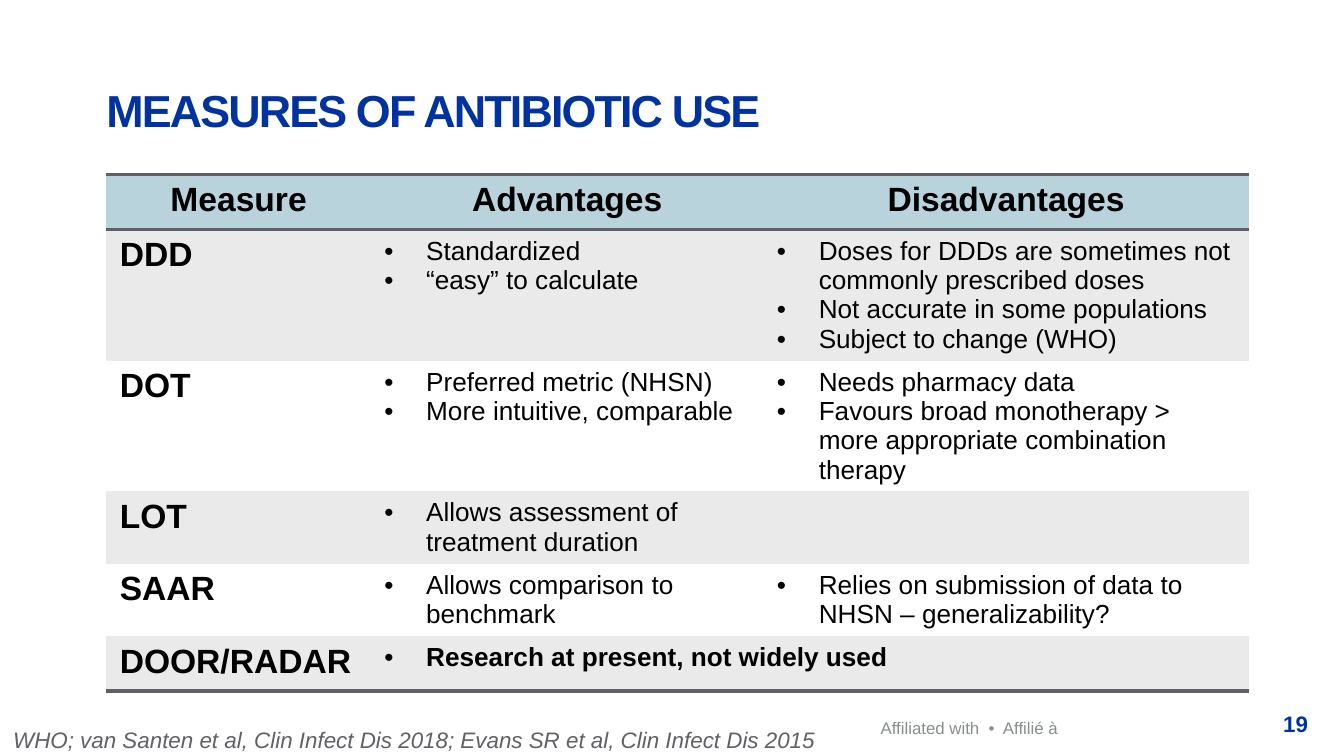
from dataclasses import dataclass

from lxml import etree
from pptx import Presentation
from pptx import util as u
from pptx.dml import color
from pptx.enum import text
from pptx.oxml import ns

FONT = "Arial"
BLUE, GREY, PALE_GREY = "0033A0", "606164", "898D8D"
BLACK, WHITE, HEADER_FILL, BAND_FILL = "000000", "FFFFFF", "B9D3DC", "EAEAEA"
LEFT, CENTER, RIGHT = text.PP_ALIGN.LEFT, text.PP_ALIGN.CENTER, text.PP_ALIGN.RIGHT
TOP, MIDDLE, BOTTOM = text.MSO_ANCHOR.TOP, text.MSO_ANCHOR.MIDDLE, text.MSO_ANCHOR.BOTTOM
NO_STYLE = "{2D5ABB26-0587-4C30-8999-92F81FD0307C}"
HEADING = {"size": u.Pt(18), "bold": True}
BODY = {"size": u.Pt(14), "bold": False}
COLUMN_WIDTHS = (5.0, 7.42, 9.17)
ROW_HEIGHT = 1.04


@dataclass(frozen=True)
class Label:
    """A one-line text box; lengths in centimetres."""
    words: str
    place: tuple[float, float, float, float]
    hue: str
    style: dict
    align: text.PP_ALIGN = LEFT
    anchor: text.MSO_ANCHOR = TOP
    insets: tuple[float, float, float, float] = (0.25, 0.13, 0.25, 0.13)
    leading: float = 1.0
    tracking: int = 0


@dataclass(frozen=True)
class Measure:
    """A table row."""
    name: str
    advantages: tuple[str, ...]
    disadvantages: tuple[str, ...] = ()
    merged: bool = False


LABELS = (
    Label("Affiliated with  •  Affilié à", (14.27, 13.56, 5.72, 0.43), PALE_GREY,
          {"size": u.Pt(9)}, RIGHT, insets=(0, 0, 0, 0)),
    Label("MEASURES OF ANTIBIOTIC USE", (2.01, 1.17, 21.59, 1.5), BLUE,
          {"size": u.Pt(24), "bold": True}, anchor=BOTTOM,
          insets=(0, 0, 0, 0.1), leading=0.8, tracking=-100),
    Label("WHO; van Santen et al, Clin Infect Dis 2018; Evans SR et al, Clin Infect Dis 2015",
          (0, 13.59, 16.79, 0.76), GREY, {"size": u.Pt(12), "italic": True}),
    Label("19", (23.01, 13.16, 1.96, 1.02), BLUE,
          {"size": u.Pt(12), "bold": True}, RIGHT, MIDDLE),
)

HEADERS = ("Measure", "Advantages", "Disadvantages")
MEASURES = (
    Measure("DDD", ("Standardized", "“easy” to calculate"),
            ("Doses for DDDs are sometimes not commonly prescribed doses",
             "Not accurate in some populations", "Subject to change (WHO)")),
    Measure("DOT", ("Preferred metric (NHSN)", "More intuitive, comparable"),
            ("Needs pharmacy data",
             "Favours broad monotherapy > more appropriate combination therapy")),
    Measure("LOT", ("Allows assessment of treatment duration",)),
    Measure("SAAR", ("Allows comparison to benchmark",),
            ("Relies on submission of data to NHSN – generalizability?",)),
    Measure("DOOR/RADAR", ("Research at present, not widely used",), merged=True),
)


def rgb(value: str) -> color.RGBColor:
    return color.RGBColor.from_string(value)


def write(para, words: str, hue: str, style: dict):
    span = para.add_run()
    span.text = words
    for name, value in {"name": FONT, **style}.items():
        setattr(span.font, name, value)
    span.font.color.rgb = rgb(hue)
    return span


def add_label(page, label: Label) -> None:
    box = page.shapes.add_textbox(*map(u.Cm, label.place))
    frame = box.text_frame
    sides = ("margin_left", "margin_top", "margin_right", "margin_bottom")
    settings = dict(zip(sides, map(u.Cm, label.insets)))
    settings.update(word_wrap=True, vertical_anchor=label.anchor)
    for name, value in settings.items():
        setattr(frame, name, value)
    para = frame.paragraphs[0]
    para.alignment, para.line_spacing = label.align, label.leading
    span = write(para, label.words, label.hue, label.style)
    if label.tracking:
        span.font._element.set("spc", str(label.tracking))


def add_bullet(para) -> None:
    properties = para._p.get_or_add_pPr()
    indent = u.Cm(0.79)
    properties.set("marL", str(indent))
    properties.set("indent", str(-indent))
    etree.SubElement(properties, ns.qn("a:buFont"), typeface=FONT)
    etree.SubElement(properties, ns.qn("a:buChar"), char="•")


def fill_cell(cell, lines: tuple[str, ...], style: dict, fill: str,
              align: text.PP_ALIGN = LEFT, bulleted: bool = False) -> None:
    cell.fill.solid()
    cell.fill.fore_color.rgb = rgb(fill)
    frame = cell.text_frame
    for index, words in enumerate(lines):
        para = frame.add_paragraph() if index else frame.paragraphs[0]
        para.alignment = align
        if bulleted:
            add_bullet(para)
        write(para, words, BLACK, style)


def rule_cell(cell, *edges: str) -> None:
    """Draw borders; edges are in the order T, B."""
    properties = cell._tc.get_or_add_tcPr()
    for index, edge in enumerate(edges):
        line = etree.Element(ns.qn(f"a:ln{edge}"), w=str(u.Pt(2)))
        paint = etree.SubElement(line, ns.qn("a:solidFill"))
        etree.SubElement(paint, ns.qn("a:srgbClr"), val=GREY)
        properties.insert(index, line)


def add_measures(page) -> None:
    holder = page.shapes.add_table(
        len(MEASURES) + 1, len(HEADERS), u.Cm(2.01), u.Cm(3.3),
        u.Cm(sum(COLUMN_WIDTHS)), u.Cm(9.6))
    table = holder.table
    table.first_row = table.horz_banding = False
    table._tbl.tblPr.find(ns.qn("a:tableStyleId")).text = NO_STYLE
    for column, width in zip(table.columns, COLUMN_WIDTHS):
        column.width = u.Cm(width)
    for row in table.rows:
        row.height = u.Cm(ROW_HEIGHT)
    holder.height = u.Cm(9.6)

    # Header row
    for cell, words in zip(table.rows[0].cells, HEADERS):
        fill_cell(cell, (words,), HEADING, HEADER_FILL, CENTER)
        rule_cell(cell, "T", "B")

    # One row for each measure, in alternating bands
    for index, measure in enumerate(MEASURES):
        name, pros, cons = table.rows[index + 1].cells
        fill = WHITE if index % 2 else BAND_FILL
        style = {**BODY, "bold": measure.merged}
        fill_cell(name, (measure.name,), HEADING, fill)
        fill_cell(pros, measure.advantages, style, fill, bulleted=True)
        fill_cell(cons, measure.disadvantages, style, fill, bulleted=True)
        if measure.merged:
            pros.merge(cons)
    for cell in table.rows[len(MEASURES)].cells:
        rule_cell(cell, "B")


def main() -> None:
    deck = Presentation()
    deck.slide_width, deck.slide_height = u.Cm(25.4), u.Cm(14.29)
    page = deck.slides.add_slide(deck.slide_layouts[6])
    add_measures(page)
    for label in LABELS:
        add_label(page, label)
    deck.save("out.pptx")


if __name__ == "__main__":
    main()
